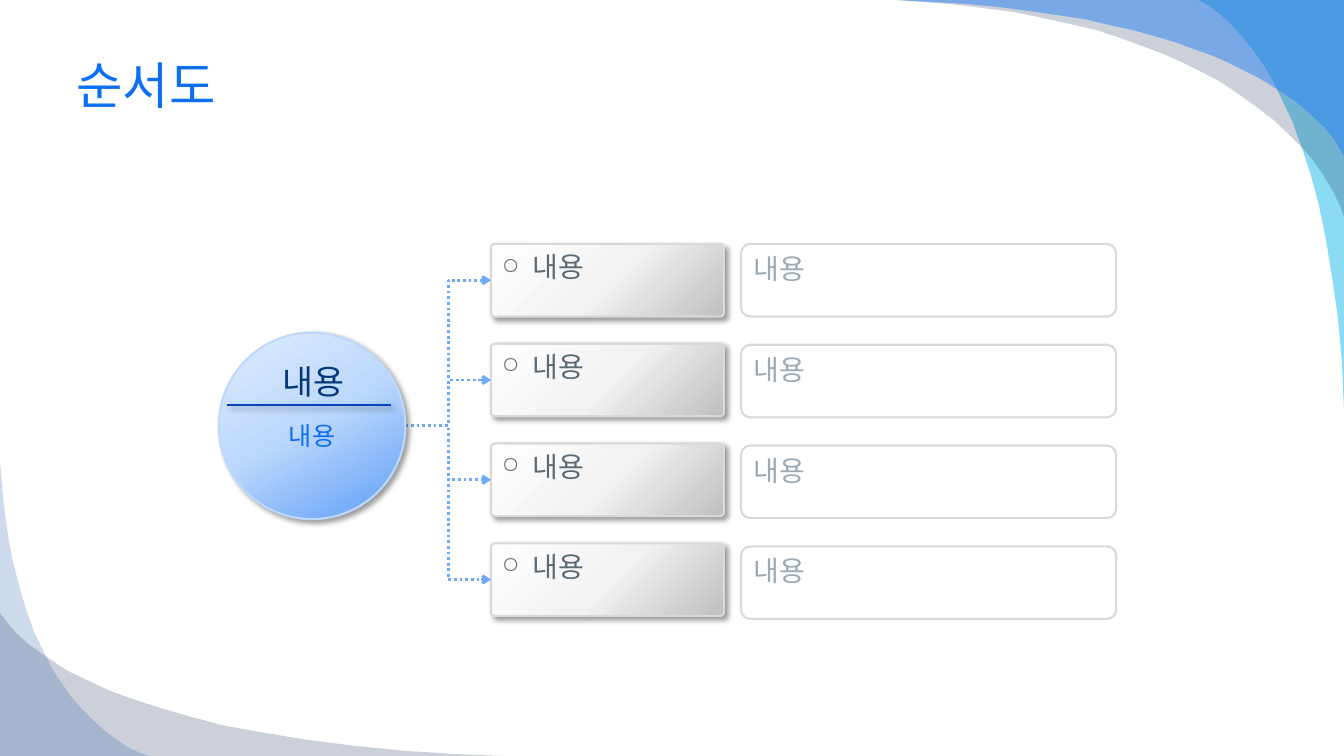
from copy import deepcopy
from dataclasses import dataclass

from lxml import etree
from pptx import Presentation
from pptx.dml.color import RGBColor
from pptx.enum.dml import MSO_LINE
from pptx.enum.shapes import MSO_CONNECTOR, MSO_SHAPE
from pptx.enum.text import MSO_ANCHOR, PP_ALIGN
from pptx.oxml.ns import qn
from pptx.util import Inches, Pt

ROUNDED, OVAL = MSO_SHAPE.ROUNDED_RECTANGLE, MSO_SHAPE.OVAL
STRAIGHT, ELBOW = MSO_CONNECTOR.STRAIGHT, MSO_CONNECTOR.ELBOW
DOTTED = MSO_LINE.ROUND_DOT
LEFT, CENTER = PP_ALIGN.LEFT, PP_ALIGN.CENTER
TOP, MIDDLE = MSO_ANCHOR.TOP, MSO_ANCHOR.MIDDLE
LEFT_SIDE = 1
FONT = "Karla"
WORD = "내용"
ROW_COUNT, ROW_TOP, ROW_HEIGHT = 4, 2.42, 0.72
LABEL_PITCH, DETAIL_PITCH = 0.99, 1.0


@dataclass
class Swoosh:
    color: str
    opacity: int
    corner: tuple
    curve: list


@dataclass
class Gradient:
    stops: list
    angle: int


@dataclass
class Caption:
    text: str
    box: tuple
    size: int
    color: str
    align: PP_ALIGN = CENTER
    anchor: MSO_ANCHOR = TOP


SILVER = Gradient([(0, "FFFFFF"), (0.51, "F2F2F2"), (1, "BFBFBF")], 45)
SKY = Gradient([(0, "DEECFD"), (0.48, "BDD8FC"), (1, "5B9EF7")], 60)

SWOOSHES = [
    Swoosh("00B1E9", 45, (13.33, 0), [
        (11.89, 0), (11.98, 0.05), (12.1, 0.14), (12.2, 0.23), (12.31, 0.35), (12.43, 0.5),
        (12.53, 0.64), (12.63, 0.81), (12.72, 1), (12.82, 1.21), (12.91, 1.46), (13, 1.73),
        (13.08, 2.03), (13.15, 2.37), (13.21, 2.74), (13.27, 3.15), (13.31, 3.6), (13.33, 4.08)]),
    Swoosh("021741", 20, (13.33, 0), [
        (8.89, 0), (9.16, 0.02), (9.42, 0.04), (9.75, 0.08), (10.06, 0.12), (10.35, 0.18),
        (10.62, 0.24), (10.88, 0.3), (11.12, 0.38), (11.34, 0.46), (11.55, 0.54), (11.75, 0.63),
        (11.93, 0.72), (12.1, 0.81), (12.25, 0.91), (12.45, 1.05), (12.63, 1.19), (12.79, 1.34),
        (12.92, 1.47), (13.03, 1.6), (13.14, 1.76), (13.22, 1.9), (13.3, 2.06), (13.33, 2.15)]),
    Swoosh("247FF4", 49, (13.33, 0), [
        (8.89, 0), (9.25, 0.02), (9.59, 0.04), (9.91, 0.07), (10.21, 0.11), (10.49, 0.15),
        (10.76, 0.19), (11.01, 0.25), (11.24, 0.3), (11.46, 0.36), (11.66, 0.42), (11.85, 0.49),
        (12.02, 0.55), (12.18, 0.62), (12.32, 0.69), (12.46, 0.76), (12.58, 0.83), (12.69, 0.9),
        (12.84, 1), (12.96, 1.1), (13.06, 1.19), (13.14, 1.27), (13.23, 1.38), (13.33, 1.55)]),
    Swoosh("021741", 20, (0, 7.5), [
        (0, 6.08), (0.06, 6.16), (0.16, 6.28), (0.27, 6.38), (0.38, 6.46), (0.51, 6.55),
        (0.66, 6.65), (0.85, 6.74), (1.06, 6.84), (1.3, 6.93), (1.58, 7.02), (1.89, 7.11),
        (2.23, 7.2), (2.62, 7.27), (3.05, 7.34), (3.52, 7.4), (4.03, 7.45), (4.5, 7.48), (5, 7.5)]),
    Swoosh("084AA1", 20, (0, 7.5), [
        (1.48, 7.5), (1.39, 7.47), (1.26, 7.41), (1.16, 7.34), (1.04, 7.25), (0.92, 7.14),
        (0.82, 7.04), (0.72, 6.93), (0.62, 6.79), (0.52, 6.64), (0.43, 6.46), (0.34, 6.27),
        (0.26, 6.05), (0.19, 5.81), (0.12, 5.54), (0.07, 5.25), (0.03, 4.93), (0, 4.58)]),
]

CAPTIONS = [
    Caption("순서도", (0.66, 0.33, 12, 1.01), 36, "0C6FF2", LEFT, MIDDLE),
    Caption(WORD, (2.5, 4.12, 1.19, 0.4), 18, "0C6FF2"),
    Caption(WORD, (2.4, 3.53, 1.41, 0.5), 24, "063879"),
]


def rgb(color: str) -> RGBColor:
    return RGBColor.from_string(color)


def add_child(parent, tag: str, **attributes):
    return etree.SubElement(parent, qn(tag), {key: str(value) for key, value in attributes.items()})


def effect_list(shape):
    """Give the shape an empty effect list, which removes the theme shadow."""
    properties = shape._element.spPr
    effects = properties.find(qn("a:effectLst"))
    return add_child(properties, "a:effectLst") if effects is None else effects


def cast_shadow(shape) -> None:
    shadow = add_child(effect_list(shape), "a:outerShdw", blurRad=Pt(4), dist=Pt(3),
                       dir=45 * 60000, algn="tl", rotWithShape=0)
    add_child(add_child(shadow, "a:srgbClr", val="000000"), "a:alpha", val=40000)


def fill_gradient(shape, gradient: Gradient) -> None:
    shape.fill.gradient()
    stop_list = shape._element.spPr.find(".//" + qn("a:gsLst"))
    stop_list.append(deepcopy(stop_list[0]))
    for stop, (position, color) in zip(shape.fill.gradient_stops, gradient.stops):
        stop.position = position
        stop.color.rgb = rgb(color)
    shape.fill.gradient_angle = 360 - gradient.angle


def add_swoosh(page, swoosh: Swoosh) -> None:
    corner, *curve = [(Inches(x), Inches(y)) for x, y in [swoosh.corner, *swoosh.curve]]
    builder = page.shapes.build_freeform(*corner)
    builder.add_line_segments(curve, close=True)
    shape = builder.convert_to_shape()
    shape.shadow.inherit = False
    shape.line.fill.background()
    shape.fill.solid()
    shape.fill.fore_color.rgb = rgb(swoosh.color)
    color = shape._element.spPr.find(qn("a:solidFill"))[0]
    add_child(color, "a:alpha", val=swoosh.opacity * 1000)


def add_panel(page, preset, box: tuple, outline: str, fill, radius: float = 0):
    """Add an outlined shape; a gradient fill also brings a shadow."""
    shape = page.shapes.add_shape(preset, *map(Inches, box))
    shape.shadow.inherit = False
    if radius:
        shape.adjustments[0] = radius
    shape.line.color.rgb = rgb(outline)
    shape.line.width = Pt(1.5)
    if isinstance(fill, Gradient):
        fill_gradient(shape, fill)
        cast_shadow(shape)
    else:
        shape.fill.solid()
        shape.fill.fore_color.rgb = rgb(fill)
    return shape


def write(shape, text: str, size: int, color: str, align=LEFT, anchor=TOP, bullet: str = "") -> None:
    frame = shape.text_frame
    frame.word_wrap = True
    frame.vertical_anchor = anchor
    para = frame.paragraphs[0]
    para.text = text
    para.alignment = align
    if bullet:
        properties = para._p.get_or_add_pPr()
        properties.set("marL", str(Inches(0.3)))
        properties.set("indent", str(Inches(-0.3)))
        add_child(add_child(properties, "a:buClr"), "a:srgbClr", val="5C6E7A")
        add_child(properties, "a:buSzPct", val=80000)
        add_child(properties, "a:buChar", char=bullet)
    para.font.size = Pt(size)
    para.font.name = FONT
    para.font.color.rgb = rgb(color)


def add_line(page, kind, start: tuple, end: tuple, color: str, width: float):
    line = page.shapes.add_connector(kind, *map(Inches, start + end))
    line.line.color.rgb = rgb(color)
    line.line.width = Pt(width)
    effect_list(line)
    return line


def add_branch(page, label) -> None:
    """Lead a dotted arrow from the circle to a label."""
    branch = add_line(page, ELBOW, (4.02, 4.22), (4.87, 4.22), "6DA9F8", 2)
    branch.end_connect(label, LEFT_SIDE)
    branch.line.dash_style = DOTTED
    add_child(branch._element.spPr.find(qn("a:ln")), "a:tailEnd", type="arrow")


def main() -> None:
    deck = Presentation()
    deck.slide_width, deck.slide_height = Inches(13.33), Inches(7.5)
    page = deck.slides.add_slide(deck.slide_layouts[6])
    for swoosh in SWOOSHES:
        add_swoosh(page, swoosh)

    for row in range(ROW_COUNT):
        label_box = (4.87, ROW_TOP + row * LABEL_PITCH, 2.31, ROW_HEIGHT)
        label = add_panel(page, ROUNDED, label_box, "D9D9D9", SILVER, 0.05)
        write(label, WORD, 20, "5B6B76", bullet="○")
        detail_box = (7.35, ROW_TOP + row * DETAIL_PITCH, 3.72, ROW_HEIGHT)
        detail = add_panel(page, ROUNDED, detail_box, "D9D9D9", "FFFFFF", 0.125)
        write(detail, WORD, 20, "9AA9B3")
        add_branch(page, label)

    add_panel(page, OVAL, (2.17, 3.3, 1.85, 1.85), "BDD8FC", SKY)
    divider = add_line(page, STRAIGHT, (2.25, 4.02), (3.88, 4.02), "0743BC", 1.25)
    cast_shadow(divider)
    for caption in CAPTIONS:
        box = page.shapes.add_textbox(*map(Inches, caption.box))
        write(box, caption.text, caption.size, caption.color, caption.align, caption.anchor)
    deck.save("out.pptx")


if __name__ == "__main__":
    main()
